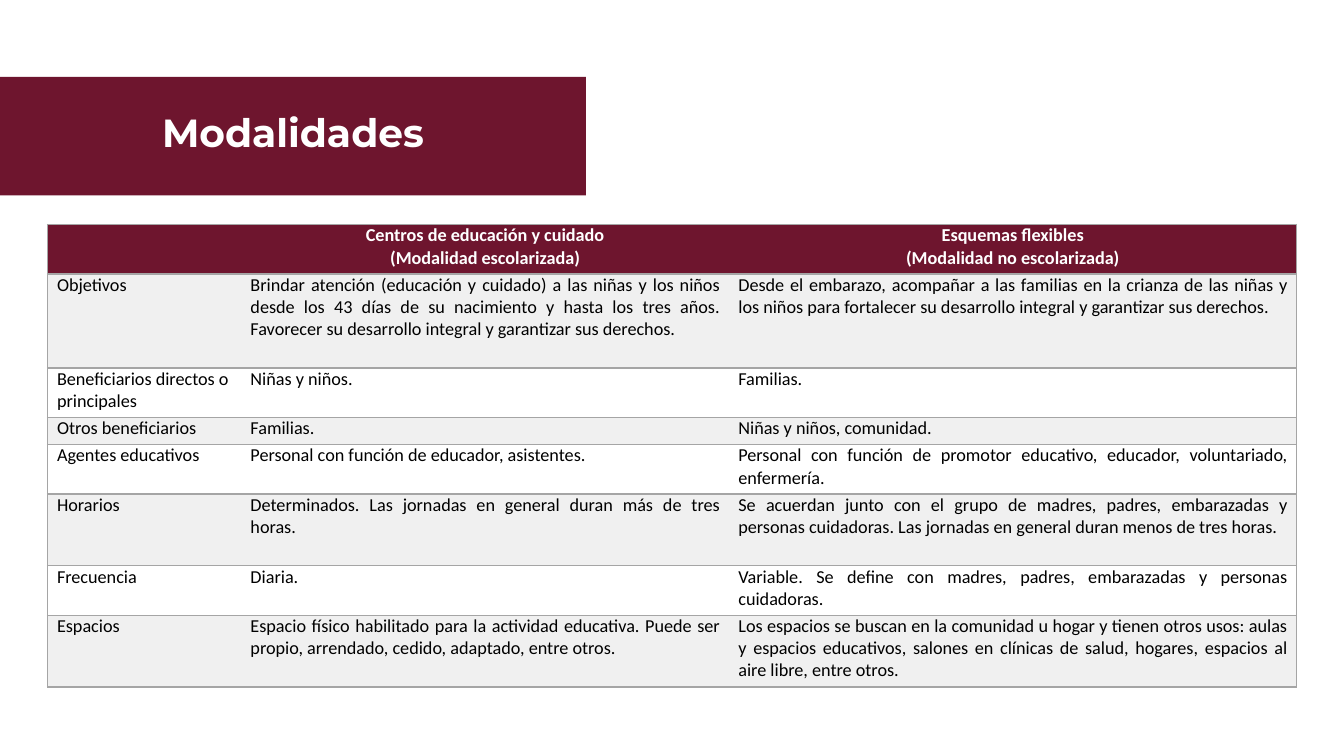
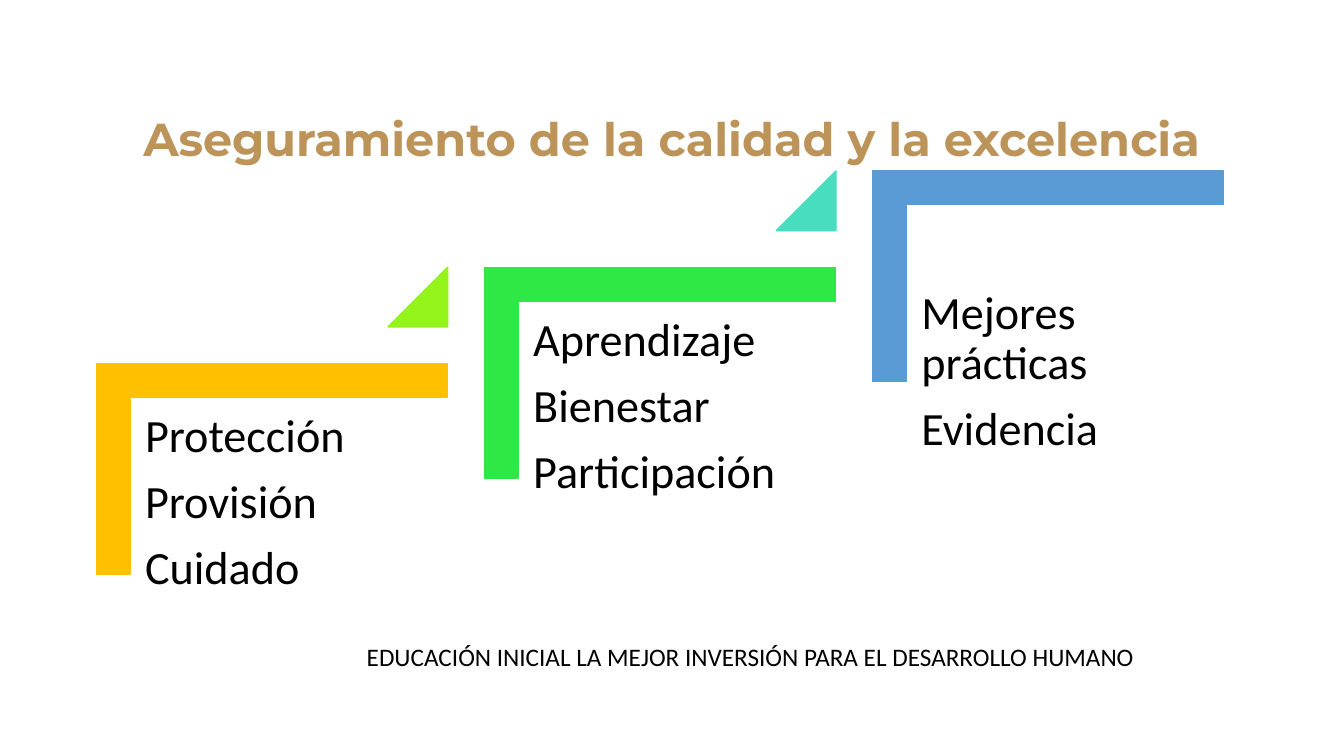
from lxml import etree
from pptx import Presentation
from pptx.dml.color import RGBColor
from pptx.enum import shapes, text
from pptx.oxml import ns
from pptx.util import Pt

WINE, GOLD, WHITE, BLACK = "6E152E", "BC945A", "FFFFFF", "000000"
GREY, BAND = "A5A5A5", "F0F0F0"
TITLE_FONT, BODY_FONT = "Montserrat", "Calibri"
ALIGN, ANCHOR, PRESET = text.PP_ALIGN, text.MSO_ANCHOR, shapes.MSO_SHAPE

COLUMNS = [138.2, 348.5, 405.4]
ROWS = [
    (35.3, "", "Centros de educación y cuidado\n(Modalidad escolarizada)",
     "Esquemas flexibles\n(Modalidad no escolarizada)"),
    (67.2, "Objetivos",
     "Brindar atención (educación y cuidado) a las niñas y los niños desde los 43 días de su "
     "nacimiento y hasta los tres años. Favorecer su desarrollo integral y garantizar sus derechos.",
     "Desde el embarazo, acompañar a las familias en la crianza de las niñas y los niños para "
     "fortalecer su desarrollo integral y garantizar sus derechos."),
    (35.3, "Beneficiarios directos o principales", "Niñas y niños.", "Familias."),
    (19.4, "Otros beneficiarios", "Familias.", "Niñas y niños, comunidad."),
    (35.3, "Agentes educativos", "Personal con función de educador, asistentes.",
     "Personal con función de promotor educativo, educador, voluntariado, enfermería."),
    (51.3, "Horarios",
     "Determinados. Las jornadas en general duran más de tres horas.",
     "Se acuerdan junto con el grupo de madres, padres, embarazadas y personas cuidadoras. "
     "Las jornadas en general duran menos de tres horas."),
    (35.3, "Frecuencia", "Diaria.",
     "Variable. Se define con madres, padres, embarazadas y personas cuidadoras."),
    (51.3, "Espacios",
     "Espacio físico habilitado para la actividad educativa. Puede ser propio, arrendado, "
     "cedido, adaptado, entre otros.",
     "Los espacios se buscan en la comunidad u hogar y tienen otros usos: aulas y espacios "
     "educativos, salones en clínicas de salud, hogares, espacios al aire libre, entre otros."),
]
STEPS = [
    ("FFC000", "94F319", 0, ["Protección", "Provisión", "Cuidado"]),
    ("30E845", "46DEBF", 0, ["Aprendizaje", "Bienestar", "Participación"]),
    ("5B9BD5", None, 50, ["Mejores prácticas", "Evidencia"]),
]


def rgb(color):
    return RGBColor.from_string(color)


def write(tf, lines, size, color=BLACK, font=BODY_FONT, bold=False,
          align=ALIGN.LEFT, spacing=None, after=None):
    for i, line in enumerate(lines):
        p = tf.paragraphs[0] if i == 0 else tf.add_paragraph()
        p.alignment = align
        p.line_spacing = spacing
        if after:
            p.space_after = Pt(after)
        r = p.add_run()
        r.text = line
        r.font.size, r.font.name, r.font.bold = Pt(size), font, bold
        r.font.color.rgb = rgb(color)


def add_shape(s, preset, box, color, outline=True):
    sp = s.shapes.add_shape(preset, *map(Pt, box))
    sp.shadow.inherit = False
    sp.fill.solid()
    sp.fill.fore_color.rgb = rgb(color)
    if outline:
        sp.line.color.rgb = rgb(color)
        sp.line.width = Pt(1)
    else:
        sp.line.fill.background()
    return sp


def add_text(s, box, lines, size, inset=None, **style):
    tf = s.shapes.add_textbox(*map(Pt, box)).text_frame
    tf.word_wrap = True
    if inset:
        tf.margin_left = tf.margin_right = tf.margin_top = tf.margin_bottom = Pt(inset)
    write(tf, lines, size, **style)
    return tf


def add_title(s, box, title, size, color, anchor):
    tf = add_text(s, box, [title], size, color=color, font=TITLE_FONT, bold=True,
                  align=ALIGN.CENTER, spacing=0.9)
    tf.vertical_anchor = anchor
    return tf


def set_borders(cell, visible):
    tc_pr = cell._tc.get_or_add_tcPr()
    for i, side in enumerate("LRTB"):
        ln = etree.Element(ns.qn(f"a:ln{side}"), w=str(Pt(1)))
        if side in visible:
            fill = etree.SubElement(ln, ns.qn("a:solidFill"))
            etree.SubElement(fill, ns.qn("a:srgbClr"), val=GREY)
        else:
            etree.SubElement(ln, ns.qn("a:noFill"))
        tc_pr.insert(i, ln)


def add_table(s, left, top):
    heights = [row[0] for row in ROWS]
    frame = s.shapes.add_table(len(ROWS), len(COLUMNS), Pt(left), Pt(top),
                               Pt(sum(COLUMNS)), Pt(sum(heights)))
    table = frame.table
    table.first_row = table.horz_banding = False
    for column, width in zip(table.columns, COLUMNS):
        column.width = Pt(width)
    for i, (height, *texts) in enumerate(ROWS):
        table.rows[i].height = Pt(height)
        header = i == 0
        for j, content in enumerate(texts):
            cell = table.cell(i, j)
            cell.margin_left = cell.margin_right = Pt(6.75)
            cell.margin_top = cell.margin_bottom = 0
            cell.fill.solid()
            cell.fill.fore_color.rgb = rgb(WINE if header else BAND if i % 2 else WHITE)
            set_borders(cell, "TB" + {0: "L", 2: "R"}.get(j, ""))
            if content:
                align = ALIGN.CENTER if header else ALIGN.JUSTIFY if j else ALIGN.LEFT
                write(cell.text_frame, content.split("\n"), 13,
                      color=WHITE if header else BLACK, bold=header, align=align)


def add_step(s, x, y, color, marker, drop, lines):
    corner = add_shape(s, PRESET.CORNER, (x, y, 150.5, 250.6), color)
    corner.rotation = 90
    corner.adjustments[0] = corner.adjustments[1] = 0.16
    add_text(s, (x - 25.2, y + 75 + drop, 227, 199 - drop), lines, 33, inset=10,
             spacing=0.9, after=11.5)
    if marker:
        triangle = add_shape(s, PRESET.ISOSCELES_TRIANGLE,
                             (x + 158.4, y - 18.7, 42.7, 42.7), marker)
        triangle.adjustments[0] = 1


def modalities_slide(s):
    box = (0, 55, 418.5, 84.7)
    add_shape(s, PRESET.RECTANGLE, box, WINE, outline=False)
    tf = add_title(s, box, "Modalidades", 28, WHITE, ANCHOR.MIDDLE)
    tf.margin_bottom = Pt(6)
    add_table(s, 34, 160.4)


def quality_slide(s):
    add_title(s, (65.5, 62, 828.7, 60.5), "Aseguramiento de la calidad y la excelencia",
              33, GOLD, ANCHOR.BOTTOM)
    for i, step in enumerate(STEPS):
        add_step(s, 118.8 + 277.3 * i, 209.5 - 68.7 * i, *step)
    add_text(s, (254.9, 454.5, 587.5, 29),
             ["EDUCACIÓN INICIAL LA MEJOR INVERSIÓN PARA EL DESARROLLO HUMANO"], 18)


def main():
    prs = Presentation()
    prs.slide_width, prs.slide_height = Pt(960), Pt(540)
    for build in (modalities_slide, quality_slide):
        build(prs.slides.add_slide(prs.slide_layouts[6]))
    prs.save("out.pptx")


if __name__ == "__main__":
    main()
